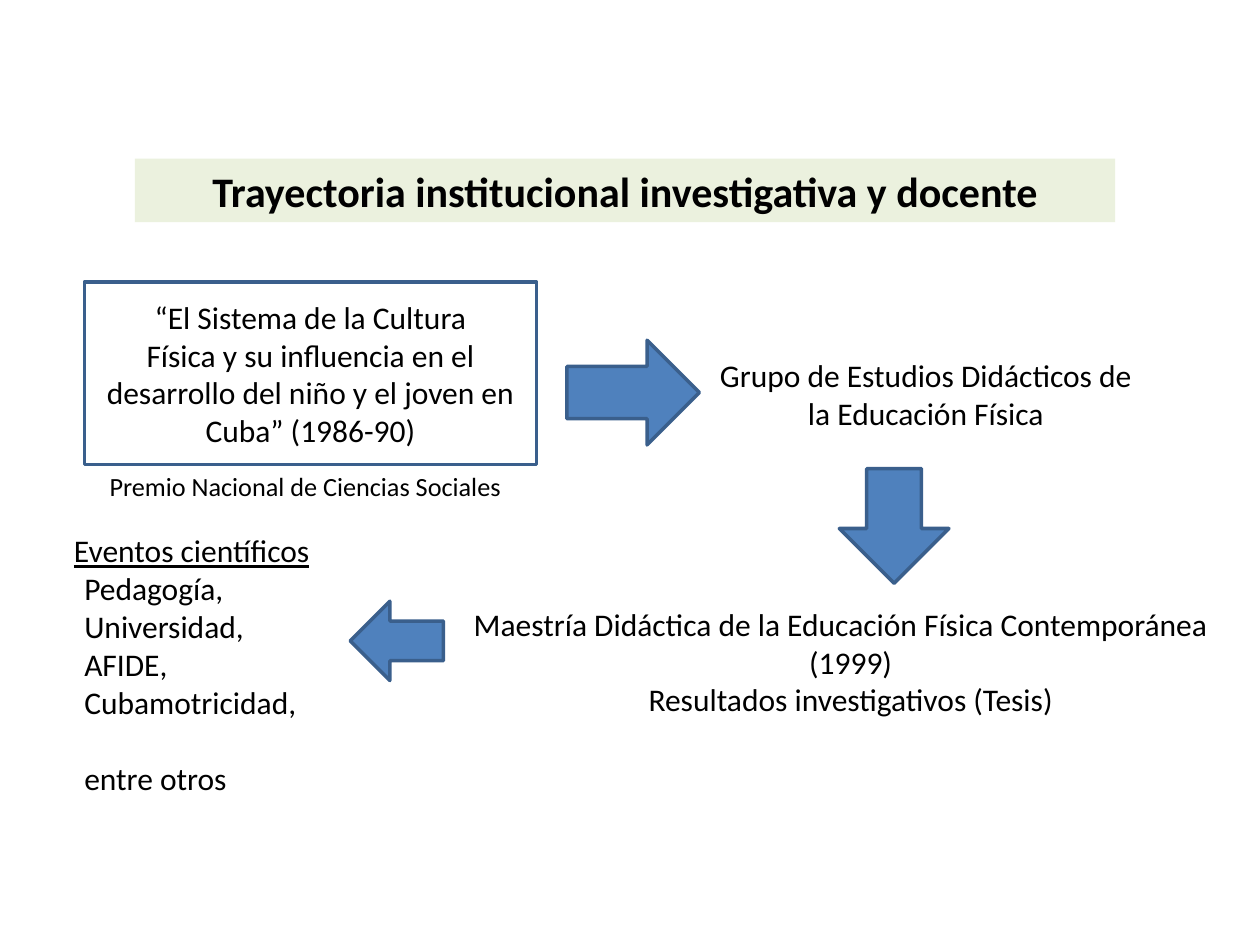
from dataclasses import dataclass

from pptx import Presentation
from pptx.dml.color import RGBColor
from pptx.enum.shapes import MSO_SHAPE
from pptx.enum.text import MSO_ANCHOR, MSO_AUTO_SIZE, PP_ALIGN
from pptx.util import Cm, Pt


@dataclass(frozen=True)
class Theme:
    font: str = "Calibri"
    text: RGBColor = RGBColor(0x00, 0x00, 0x00)
    paper: RGBColor = RGBColor(0xFF, 0xFF, 0xFF)
    banner: RGBColor = RGBColor(0xEB, 0xF1, 0xDE)
    arrow: RGBColor = RGBColor(0x4F, 0x81, 0xBD)
    outline: RGBColor = RGBColor(0x3A, 0x5F, 0x8C)
    outline_width: float = 2
    title_size: float = 24
    body_size: float = 18
    caption_size: float = 15


THEME = Theme()


def place(sp, left, top, width, height):
    sp.left, sp.top, sp.width, sp.height = Cm(left), Cm(top), Cm(width), Cm(height)


def write(sp, lines, size=THEME.body_size, align=PP_ALIGN.CENTER, anchor=MSO_ANCHOR.TOP):
    """Fill a shape with one paragraph per line and return the paragraphs."""
    tf = sp.text_frame
    tf.word_wrap = True
    tf.auto_size = MSO_AUTO_SIZE.NONE
    tf.vertical_anchor = anchor
    tf.text = "\n".join(lines)
    for p in tf.paragraphs:
        p.alignment = align
        p.font.name = THEME.font
        p.font.size = Pt(size)
        p.font.color.rgb = THEME.text
    return tf.paragraphs


def add_title(s, text, box):
    sp = s.shapes.title
    place(sp, *box)
    sp.fill.solid()
    sp.fill.fore_color.rgb = THEME.banner
    p = write(sp, [text], THEME.title_size, anchor=MSO_ANCHOR.MIDDLE)[0]
    p.font.bold = True


def add_outlined(s, kind, box, fill):
    sp = s.shapes.add_shape(kind, *map(Cm, box))
    sp.shadow.inherit = False
    sp.fill.solid()
    sp.fill.fore_color.rgb = fill
    sp.line.color.rgb = THEME.outline
    sp.line.width = Pt(THEME.outline_width)
    return sp


def add_text(s, lines, box, **style):
    return write(s.shapes.add_textbox(*map(Cm, box)), lines, **style)


def add_events(s, heading, events, box):
    """Underlined heading over an indented list whose last line is set apart."""
    head, *items = add_text(s, [heading, *events], box, align=PP_ALIGN.LEFT)
    head.alignment = PP_ALIGN.CENTER
    head.font.underline = True
    for p in items:
        # The indent has no public property
        p._p.get_or_add_pPr().set("marL", str(Cm(0.43)))
    items[-1].space_before = Pt(22)


def main():
    prs = Presentation()
    prs.slide_width, prs.slide_height = Cm(25.4), Cm(19.05)
    s = prs.slides.add_slide(prs.slide_layouts[5])

    # Title banner
    add_title(s, "Trayectoria institucional investigativa y docente", (2.72, 3.2, 19.76, 1.28))

    # Starting project and its award
    project = add_outlined(s, MSO_SHAPE.RECTANGLE, (1.7, 5.69, 9.12, 3.68), THEME.paper)
    write(project, ["“El Sistema de la Cultura\vFísica y su influencia en el desarrollo "
                    "del niño y el joven en Cuba” (1986-90)"], anchor=MSO_ANCHOR.MIDDLE)
    add_text(s, ["Premio Nacional de Ciencias Sociales"], (1.96, 9.35, 8.71, 0.89),
             size=THEME.caption_size, align=PP_ALIGN.LEFT)

    # Study group
    add_text(s, ["Grupo de Estudios Didácticos de la Educación Física"],
             (14.07, 7.06, 9.19, 1.8))

    # Master's programme
    programme = add_text(s, ["Maestría Didáctica de la Educación Física Contemporánea",
                             "(1999)", "Resultados investigativos (Tesis)"],
                         (9.3, 12.07, 15.7, 2.57))
    programme[0].alignment = PP_ALIGN.LEFT

    # Scientific events
    add_events(s, "Eventos científicos",
               ["Pedagogía,", "Universidad,", "AFIDE,", "Cubamotricidad,", "entre otros"],
               (1.02, 10.59, 5.69, 5.64))

    # Arrows along the path
    for kind, box in (
        (MSO_SHAPE.RIGHT_ARROW, (11.43, 6.86, 2.67, 2.11)),
        (MSO_SHAPE.DOWN_ARROW, (16.92, 9.45, 2.21, 2.31)),
        (MSO_SHAPE.LEFT_ARROW, (7.06, 12.12, 1.88, 1.6)),
    ):
        add_outlined(s, kind, box, THEME.arrow)

    prs.save("out.pptx")


if __name__ == "__main__":
    main()
